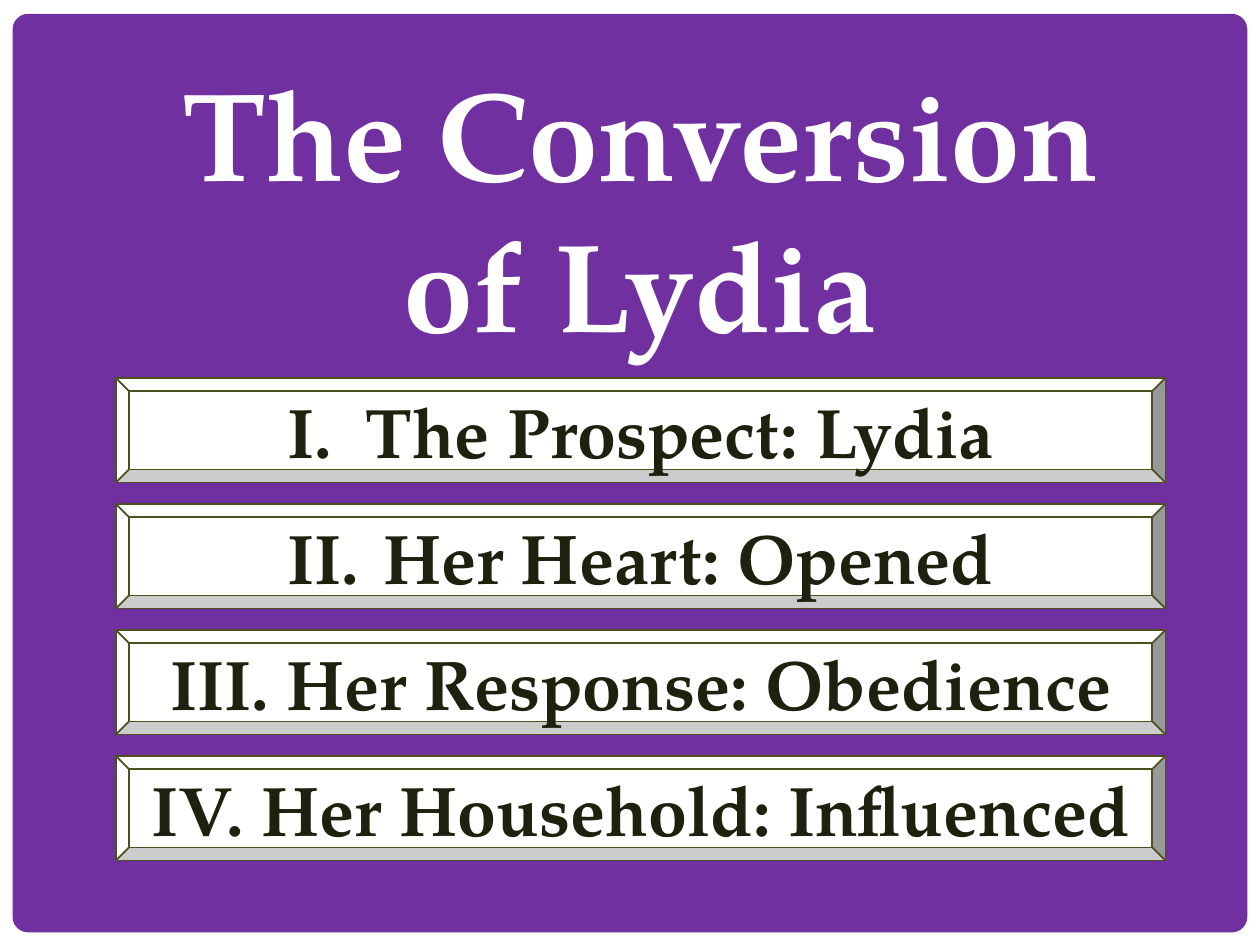
from dataclasses import dataclass

from lxml.etree import SubElement
from pptx import Presentation
from pptx.dml.color import RGBColor
from pptx.enum.shapes import MSO_SHAPE
from pptx.enum.text import MSO_ANCHOR, MSO_AUTO_SIZE, PP_ALIGN
from pptx.oxml.ns import qn
from pptx.util import Inches, Pt

PURPLE = RGBColor(0x70, 0x30, 0xA0)
WHITE = RGBColor(0xFF, 0xFF, 0xFF)
OLIVE = RGBColor(0x4E, 0x50, 0x1F)
DARK_OLIVE = RGBColor(0x1F, 0x20, 0x0D)
FONT = "TeX Gyre Pagella"


@dataclass
class Point:
    number: int
    text: str


POINTS = [
    Point(1, "The Prospect: Lydia"),
    Point(2, " Her Heart: Opened"),
    Point(3, " Her Response: Obedience"),
    Point(4, " Her Household: Influenced"),
]


def add_filled_shape(page, kind, left: float, top: float, width: float,
                     height: float, color: RGBColor):
    shape = page.shapes.add_shape(
        kind, Inches(left), Inches(top), Inches(width), Inches(height))
    shape.shadow.inherit = False
    shape.fill.solid()
    shape.fill.fore_color.rgb = color
    shape.line.fill.background()
    return shape


def format_text(frame, size: int, color: RGBColor) -> None:
    for para in frame.paragraphs:
        para.alignment = PP_ALIGN.CENTER
        for span in para.runs:
            span.font.name = FONT
            span.font.size = Pt(size)
            span.font.bold = True
            span.font.color.rgb = color


def add_roman_number(para, number: int) -> None:
    properties = para._p.get_or_add_pPr()
    properties.set("marL", str(Inches(0.62)))
    properties.set("indent", str(Inches(-0.62)))
    SubElement(properties, qn("a:buFont"), typeface=FONT)
    SubElement(properties, qn("a:buAutoNum"),
               type="romanUcPeriod", startAt=str(number))


def add_point(page, point: Point) -> None:
    top = 2 + point.number  # one bar per inch, from 3 inches down
    bar = add_filled_shape(page, MSO_SHAPE.BEVEL, 0.92, top, 8.33, 0.83, WHITE)
    bar.line.color.rgb = OLIVE
    bar.line.width = Pt(1)
    frame = bar.text_frame
    frame.text = point.text
    frame.vertical_anchor = MSO_ANCHOR.MIDDLE
    format_text(frame, 40, DARK_OLIVE)
    add_roman_number(frame.paragraphs[0], point.number)


def add_title(page) -> None:
    title = page.shapes.title
    title.left, title.top = Inches(1.29), Inches(0.39)
    title.width, title.height = Inches(7.58), Inches(2.52)
    frame = title.text_frame
    frame.text = "The Conversion\nof Lydia"
    frame.word_wrap = False
    frame.auto_size = MSO_AUTO_SIZE.SHAPE_TO_FIT_TEXT
    frame.vertical_anchor = MSO_ANCHOR.TOP
    format_text(frame, 72, WHITE)
    # Bring the title in front of the backdrop
    page.shapes._spTree.append(title._element)


def main() -> None:
    deck = Presentation()
    deck.slide_width, deck.slide_height = Inches(10), Inches(7.5)
    page = deck.slides.add_slide(deck.slide_layouts[5])

    # Backdrop: white frame around a rounded purple panel
    page.background.fill.solid()
    page.background.fill.fore_color.rgb = PURPLE
    add_filled_shape(page, MSO_SHAPE.RECTANGLE, 0, 0, 10, 7.5, WHITE)
    panel = add_filled_shape(
        page, MSO_SHAPE.ROUNDED_RECTANGLE, 0.1, 0.11, 9.8, 7.29, PURPLE)
    panel.adjustments[0] = 0.017

    # Title and numbered points
    add_title(page)
    for point in POINTS:
        add_point(page, point)

    deck.save("out.pptx")


if __name__ == "__main__":
    main()
